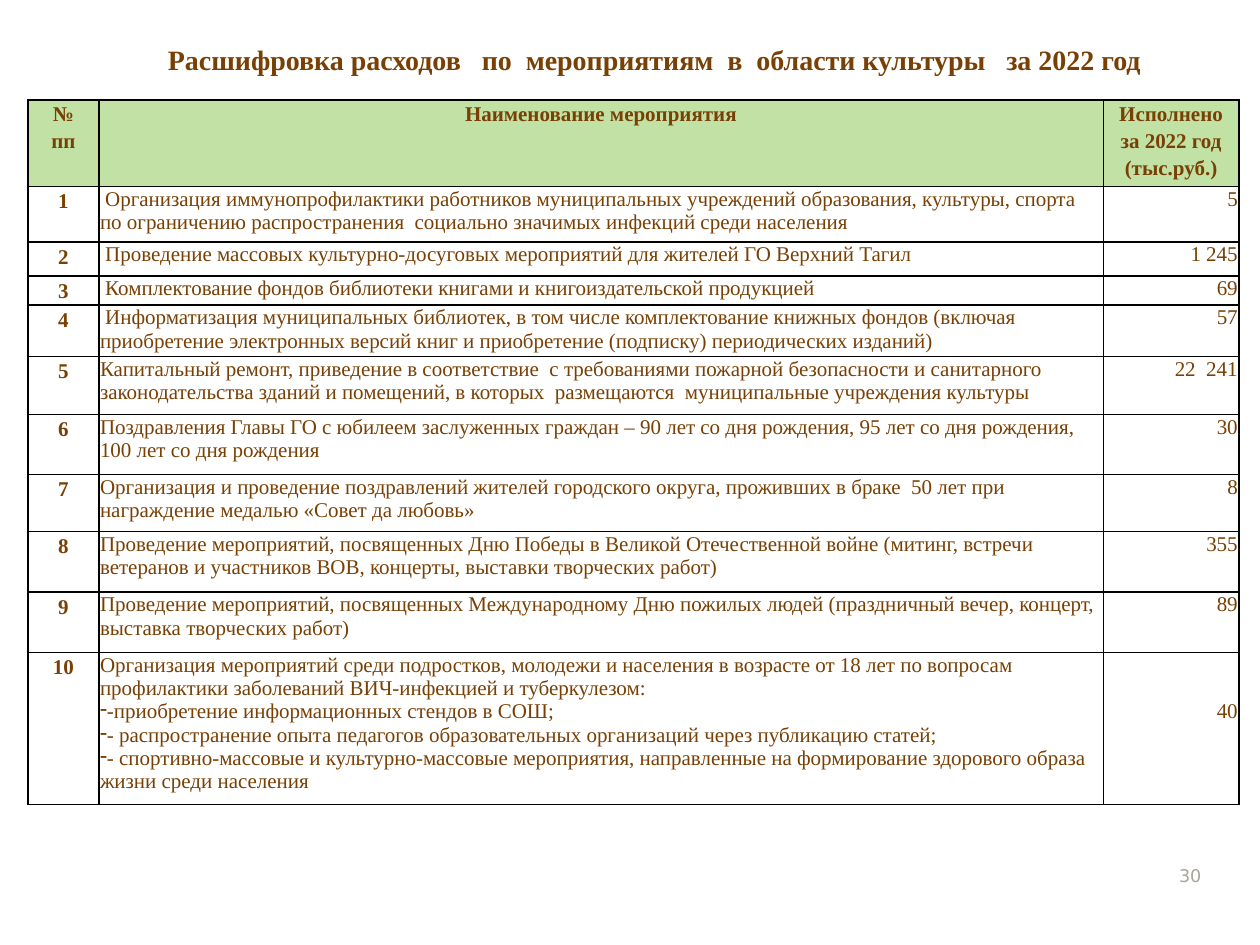
from dataclasses import dataclass

from lxml.etree import SubElement
from pptx import Presentation
from pptx.dml.color import RGBColor
from pptx.enum.text import MSO_ANCHOR as Anchor, PP_ALIGN as Align
from pptx.oxml import parse_xml
from pptx.oxml.ns import nsdecls, qn
from pptx.util import Pt

COLORS = {"text": "784004", "header": "C2E1A5", "border": "000000", "number": "A8A49B"}
SERIF = "Times New Roman"
COLUMN_WIDTHS = (40.5, 574, 77.5)
HEADER_HEIGHT = 46


@dataclass(frozen=True)
class Event:
    name: str
    amount: str
    height: float
    details: tuple[str, ...] = ()
    amount_top: float = 0.7


HEADERS = (
    ("№", "пп"),
    ("Наименование мероприятия",),
    ("Исполнено", "за 2022 год", "(тыс.руб.)"),
)

EVENTS = (
    Event(" Организация иммунопрофилактики работников муниципальных учреждений образования, культуры, спорта по ограничению распространения  социально значимых инфекций среди населения", "5", 31.5),
    Event(" Проведение массовых культурно-досуговых мероприятий для жителей ГО Верхний Тагил", "1 245", 19.5),
    Event(" Комплектование фондов библиотеки книгами и книгоиздательской продукцией", "69", 16.5),
    Event(" Информатизация муниципальных библиотек, в том числе комплектование книжных фондов (включая приобретение электронных версий книг и приобретение (подписку) периодических изданий)", "57", 28),
    Event("Капитальный ремонт, приведение в соответствие  с требованиями пожарной безопасности и санитарного законодательства зданий и помещений, в которых  размещаются  муниципальные учреждения культуры", "22  241", 33),
    Event("Поздравления Главы ГО с юбилеем заслуженных граждан – 90 лет со дня рождения, 95 лет со дня рождения, 100 лет со дня рождения", "30", 34.5),
    Event("Организация и проведение поздравлений жителей городского округа, проживших в браке  50 лет при награждение медалью «Совет да любовь»", "8", 32.5),
    Event("Проведение мероприятий, посвященных Дню Победы в Великой Отечественной войне (митинг, встречи ветеранов и участников ВОВ, концерты, выставки творческих работ)", "355", 34.5),
    Event("Проведение мероприятий, посвященных Международному Дню пожилых людей (праздничный вечер, концерт, выставка творческих работ)", "89", 34.5),
    Event(
        "Организация мероприятий среди подростков, молодежи и населения в возрасте от 18 лет по вопросам профилактики заболеваний ВИЧ-инфекцией и туберкулезом:",
        "40",
        80.5,
        (
            "-приобретение информационных стендов в СОШ;",
            "- распространение опыта педагогов образовательных организаций через публикацию статей;",
            "- спортивно-массовые и культурно-массовые мероприятия, направленные на формирование здорового образа жизни среди населения",
        ),
        27.3,
    ),
)


def write(frame, text: str, *, size=12, font=SERIF, color="text", bold=False,
          align=Align.LEFT, spacing=None, bullet=None, first=True) -> None:
    para = frame.paragraphs[0] if first else frame.add_paragraph()
    para.alignment = align
    if spacing:
        para.line_spacing = spacing
    if bullet:
        properties = para._p.get_or_add_pPr()
        properties.set("marL", "0")
        properties.set("indent", "0")
        SubElement(properties, qn("a:buChar")).set("char", bullet)
    span = para.add_run()
    span.text = text
    span.font.size = Pt(size)
    span.font.name = font
    span.font.bold = bold
    span.font.color.rgb = RGBColor.from_string(COLORS[color])


def add_text(page, text: str, left: float, top: float, width: float, height: float,
             anchor: Anchor, bottom: float = 3.6, **style) -> None:
    box = page.shapes.add_textbox(Pt(left), Pt(top), Pt(width), Pt(height))
    frame = box.text_frame
    frame.word_wrap = True
    frame.vertical_anchor = anchor
    frame.margin_bottom = Pt(bottom)
    write(frame, text, **style)


def format_cell(cell, side: float, top: float = 0, fill: str | None = None) -> None:
    cell.margin_left = cell.margin_right = Pt(side)
    cell.margin_top, cell.margin_bottom = Pt(top), Pt(0)
    if fill:
        cell.fill.solid()
        cell.fill.fore_color.rgb = RGBColor.from_string(COLORS[fill])
    else:
        cell.fill.background()
    properties = cell._tc.get_or_add_tcPr()
    for index, edge in enumerate(("lnL", "lnR", "lnT", "lnB")):
        properties.insert(index, parse_xml(
            f'<a:{edge} {nsdecls("a")} w="{Pt(1)}"><a:solidFill>'
            f'<a:srgbClr val="{COLORS["border"]}"/></a:solidFill></a:{edge}>'))


def fill_header(cell, lines: tuple[str, ...]) -> None:
    format_cell(cell, 2.9, fill="header")
    for index, line in enumerate(lines):
        write(cell.text_frame, line, bold=True, align=Align.CENTER,
              spacing=1.15, first=index == 0)


def fill_event(table, row: int, event: Event) -> None:
    number, name, amount = (table.cell(row, column) for column in range(3))
    format_cell(number, 3.6)
    write(number.text_frame, str(row), bold=True, align=Align.CENTER, spacing=1.15)
    format_cell(name, 0.7, 0.7)
    write(name.text_frame, event.name)
    for detail in event.details:
        write(name.text_frame, detail, bullet="-", first=False)
    format_cell(amount, 0.7, event.amount_top)
    write(amount.text_frame, event.amount, align=Align.RIGHT)


def add_expenses(page) -> None:
    heights = [HEADER_HEIGHT, *(event.height for event in EVENTS)]
    table = page.shapes.add_table(
        len(heights), len(COLUMN_WIDTHS), Pt(16), Pt(57),
        Pt(sum(COLUMN_WIDTHS)), Pt(sum(heights))).table
    table.horz_banding = False
    for column, width in zip(table.columns, COLUMN_WIDTHS):
        column.width = Pt(width)
    for row, height in zip(table.rows, heights):
        row.height = Pt(height)
    for column, lines in enumerate(HEADERS):
        fill_header(table.cell(0, column), lines)
    for row, event in enumerate(EVENTS, 1):
        fill_event(table, row, event)


def main() -> None:
    deck = Presentation()
    deck.slide_width, deck.slide_height = Pt(720), Pt(540)
    page = deck.slides.add_slide(deck.slide_layouts[6])
    add_text(page, "30", 657.5, 481, 36, 29, Anchor.BOTTOM, size=10,
             font="DejaVu Sans", color="number", align=Align.RIGHT)
    add_expenses(page)
    add_text(page, "Расшифровка расходов   по  мероприятиям  в  области культуры   за 2022 год",
             28, 19.5, 692, 37.5, Anchor.MIDDLE, bottom=12.6,
             size=16, bold=True, align=Align.CENTER)
    deck.save("out.pptx")


if __name__ == "__main__":
    main()
